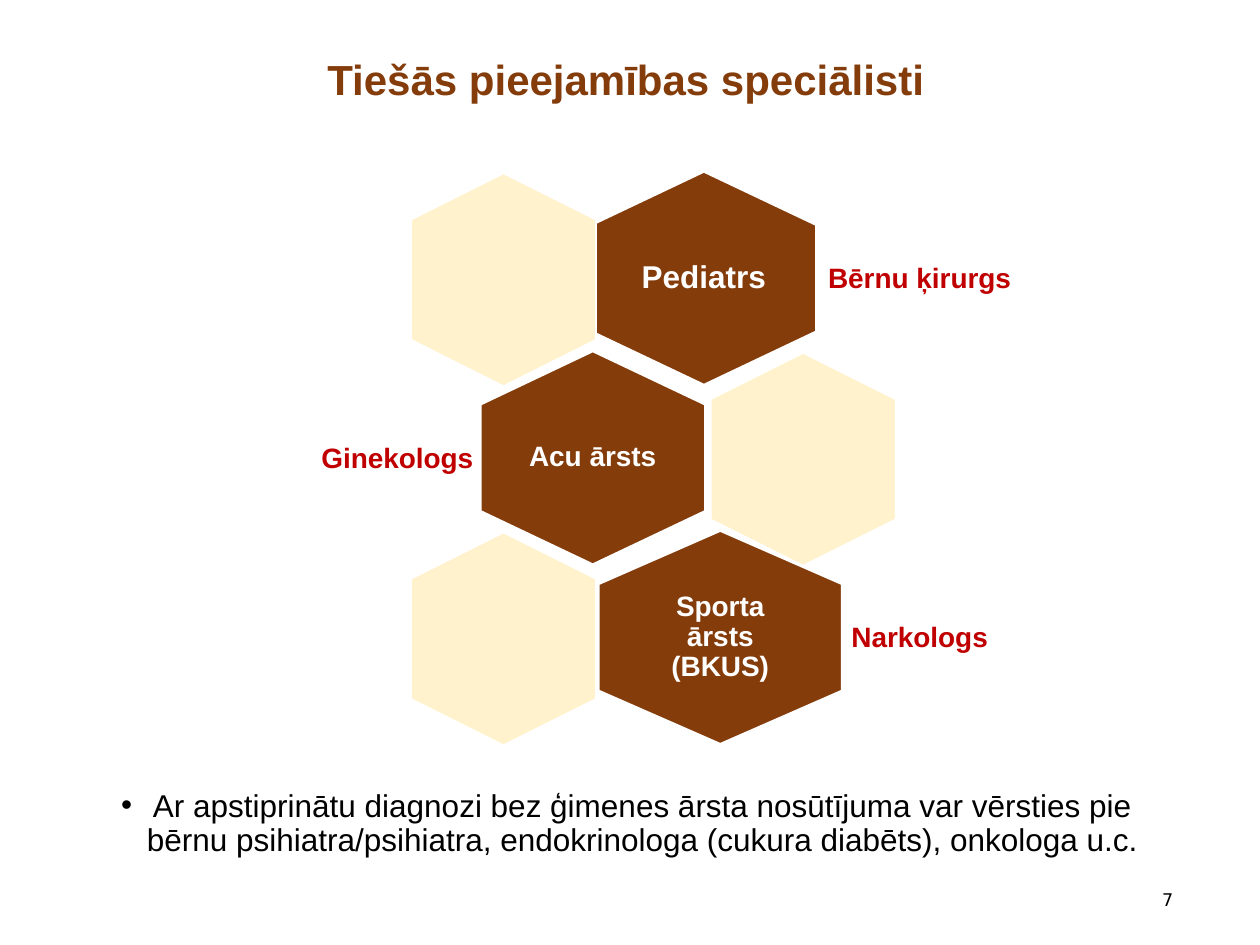
from lxml import etree
from pptx import Presentation
from pptx import util as u
from pptx.dml.color import RGBColor
from pptx.enum import shapes, text
from pptx.oxml.ns import qn

BROWN, CREAM, RED = "843C0B", "FFF2CC", "C00000"
WHITE, BLACK = "FFFFFF", "000000"
CENTER, RIGHT = text.PP_ALIGN.CENTER, text.PP_ALIGN.RIGHT
ROW_TOP, ROW_PITCH = 5.61, 3.62
HEXAGON_LENGTH, CREAM_ACROSS = 4.29, 3.73

ROWS = [
    {"name": "Pediatrs", "x": 14.19, "across": 4.52, "name_width": 3.02, "size": 18,
     "cream_x": 10.15, "label": "Bērnu ķirurgs", "label_x": 18.54,
     "label_width": 4.17, "align": CENTER},
    {"name": "Acu ārsts", "x": 11.95, "across": 4.52, "name_width": 3.02, "size": 16,
     "cream_x": 16.19, "label": "Ginekologs", "label_x": 7.82,
     "label_width": 3.81, "align": RIGHT},
    {"name": "Sporta ārsts (BKUS)", "x": 14.52, "across": 4.9, "name_width": 3.28, "size": 16,
     "cream_x": 10.15, "label": "Narkologs", "label_x": 18.54,
     "label_width": 3.71, "align": CENTER},
]


def color(value):
    return RGBColor.from_string(value)


def add_text(slide, left, top, width, height, content, size, fill, bold=False,
             align=None, font="Arial", spacing=0.9, middle=False):
    box = slide.shapes.add_textbox(u.Cm(left), u.Cm(top), u.Cm(width), u.Cm(height))
    frame = box.text_frame
    frame.word_wrap = True
    frame.vertical_anchor = text.MSO_ANCHOR.MIDDLE if middle else text.MSO_ANCHOR.TOP
    paragraph = frame.paragraphs[0]
    paragraph.text = content
    paragraph.alignment = align
    paragraph.line_spacing = spacing
    paragraph.font.name = font
    paragraph.font.size = u.Pt(size)
    paragraph.font.bold = bold
    paragraph.font.color.rgb = color(fill)
    return frame


def add_label(slide, x, y, width, height, content, size, fill, align=CENTER):
    frame = add_text(slide, x - width / 2, y - height / 2, width, height, content,
                     size, fill, bold=True, align=align, middle=True)
    frame.margin_left = frame.margin_right = u.Cm(0.18)
    frame.margin_top = frame.margin_bottom = u.Cm(0.18)


def add_hexagon(slide, x, y, across, fill):
    hexagon = slide.shapes.add_shape(
        shapes.MSO_SHAPE.HEXAGON, u.Cm(x - HEXAGON_LENGTH / 2), u.Cm(y - across / 2),
        u.Cm(HEXAGON_LENGTH), u.Cm(across))
    hexagon.rotation = 90
    hexagon.adjustments[0] = 0.25
    hexagon.shadow.inherit = False
    hexagon.fill.solid()
    hexagon.fill.fore_color.rgb = color(fill)
    hexagon.line.color.rgb = color(WHITE)
    hexagon.line.width = u.Pt(1)


def add_row(slide, index, row):
    y = ROW_TOP + index * ROW_PITCH
    add_hexagon(slide, row["x"], y, row["across"], BROWN)
    add_label(slide, row["x"], y, row["name_width"], 2.87, row["name"], row["size"], WHITE)
    add_label(slide, row["label_x"], y + 0.03, row["label_width"], 2.57,
              row["label"], 16, RED, row["align"])
    add_hexagon(slide, row["cream_x"], y + 0.03, CREAM_ACROSS, CREAM)


def add_bullet(slide, left, top, width, height, content):
    frame = add_text(slide, left, top, width, height, "", 18, BLACK, align=CENTER)
    paragraph = frame.paragraphs[0]
    properties = paragraph._p.get_or_add_pPr()
    properties.set("marL", str(u.Cm(0.64)))
    properties.set("indent", str(-u.Cm(0.64)))
    bullet_font = etree.Element(qn("a:buFont"), typeface="Arial")
    bullet = etree.Element(qn("a:buChar"), char="•")
    defaults = properties.find(qn("a:defRPr"))
    defaults.addprevious(bullet_font)
    defaults.addprevious(bullet)
    paragraph.add_run().text = content


def main():
    presentation = Presentation()
    presentation.slide_width = u.Cm(25.4)
    presentation.slide_height = u.Cm(19.05)
    slide = presentation.slides.add_slide(presentation.slide_layouts[6])
    add_text(slide, 21.74, 17.63, 2.16, 1.02, "7", 10, BLACK, align=RIGHT,
             font="DejaVu Sans", spacing=1.0, middle=True)
    add_text(slide, 6.35, 1.07, 17.58, 2.64, "Tiešās pieejamības speciālisti",
             24, BROWN, bold=True)
    for index, row in enumerate(ROWS):
        add_row(slide, index, row)
    add_bullet(slide, 1.35, 15.8, 22.56, 2.18,
               "Ar apstiprinātu diagnozi bez ģimenes ārsta nosūtījuma var vērsties pie "
               "bērnu psihiatra/psihiatra, endokrinologa (cukura diabēts), onkologa u.c.")
    presentation.save("out.pptx")


if __name__ == "__main__":
    main()
